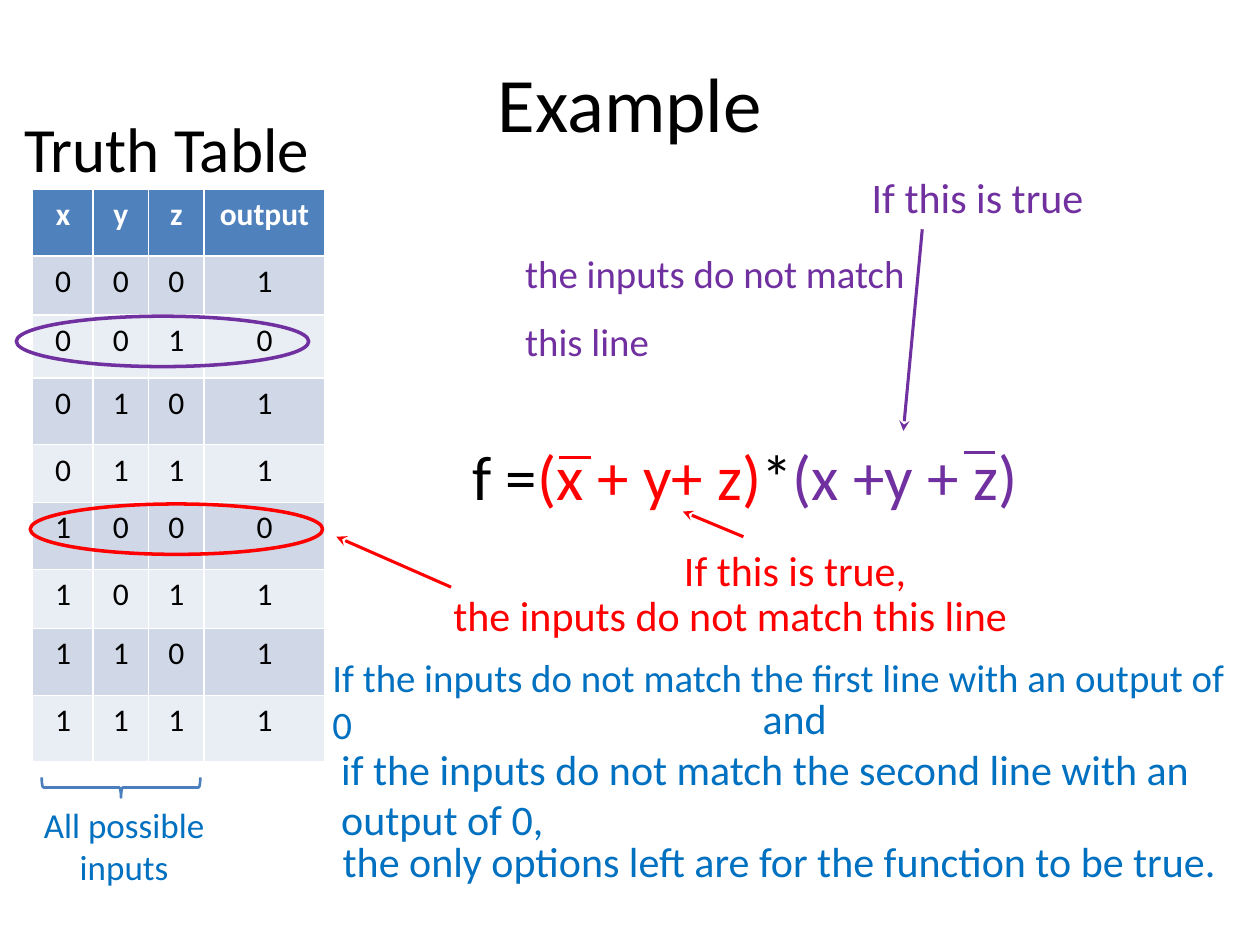
from itertools import product

from pptx import Presentation
from pptx.dml.color import RGBColor
from pptx.enum.shapes import MSO_CONNECTOR, MSO_SHAPE
from pptx.enum.text import MSO_ANCHOR, PP_ALIGN
from pptx.oxml.xmlchemy import OxmlElement
from pptx.util import Inches, Pt

FONT = "Calibri"
BLACK = RGBColor(0x00, 0x00, 0x00)
WHITE = RGBColor(0xFF, 0xFF, 0xFF)
RED = RGBColor(0xFF, 0x00, 0x00)
PURPLE = RGBColor(0x70, 0x30, 0xA0)
BLUE = RGBColor(0x00, 0x70, 0xC0)
BRACE_BLUE = RGBColor(0x4B, 0x7E, 0xBC)
HEADER_FILL = RGBColor(0x4F, 0x81, 0xBD)
BAND_FILLS = (RGBColor(0xE9, 0xED, 0xF4), RGBColor(0xD0, 0xD8, 0xE8))
LEFT, CENTER = PP_ALIGN.LEFT, PP_ALIGN.CENTER

# Truth table: output is 0 only for the two ringed lines
HEADERS = ("x", "y", "z", "output")
ZERO_LINES = {(0, 0, 1), (1, 0, 0)}
TABLE_AT = (0.26, 1.5)
COLUMN_WIDTHS = (0.48, 0.44, 0.44, 0.96)
ROW_HEIGHTS = (0.53, 0.47, 0.5, 0.53, 0.46, 0.53, 0.47, 0.53, 0.53)

RINGS = [((0.13, 2.51, 2.32, 0.4), PURPLE), ((0.24, 4, 2.32, 0.4), RED)]
ARROWS = [
    ((7.32, 1.82), (7.17, 3.42), PURPLE),
    ((3.58, 4.66), (2.67, 4.26), RED),
    ((5.9, 4.26), (5.42, 4.06), RED),
]
BRACE_BOX = (0.88, 5.62, 0.16, 1.26)

FORMULA_BOX = (3.65, 3.42, 4.58, 0.71)
FORMULA = [("f =", BLACK), ("(x + y+ z)", RED), ("*", BLACK), ("(x +y + z)", PURPLE)]
NEGATION_BARS = [((4.44, 3.63), (4.69, 3.63), RED), ((7.65, 3.59), (7.9, 3.59), PURPLE)]

# Box, size, colour, line spacing, paragraphs as (text, alignment)
TEXTS = [
    ((0.5, 0.3, 9, 1.02), 44, BLACK, 1, [("Example", CENTER)]),
    ((-0.02, 0.82, 2.63, 0.71), 36, BLACK, 1, [(" Truth Table", LEFT)]),
    ((6.82, 1.11, 2.97, 0.88), 24, PURPLE, 1.5, [("If this is true", LEFT)]),
    ((4, 1.82, 3.42, 1.15), 22.2, PURPLE, 1.3,
     [(" the inputs do not match", LEFT), (" this line", LEFT)]),
    ((5.33, 4.07, 2.32, 0.67), 24, RED, 1.5, [("If this is true,", LEFT)]),
    ((3.5, 4.43, 5.81, 0.74), 24, RED, 1.5,
     [("the inputs do not match this line", LEFT)]),
    ((2.54, 5.14, 7.47, 0.62), 22.2, BLUE, 1,
     [("If the inputs do not match the first line with an output of 0", LEFT)]),
    ((2.61, 5.45, 7.47, 1.23), 24, BLUE, 1,
     [("and ", CENTER),
      ("if the inputs do not match the second line with an output of 0,", LEFT)]),
    ((2.45, 6.58, 7.47, 0.62), 24, BLUE, 1,
     [("the only options left are for the function to be true.", CENTER)]),
    ((0.18, 6.33, 1.61, 0.81), 20, BLUE, 1, [("All possible inputs", CENTER)]),
]


def inches(lengths):
    return [Inches(length) for length in lengths]


def style(run, size, color, bold=False):
    run.font.name, run.font.size = FONT, Pt(size)
    run.font.color.rgb, run.font.bold = color, bold


def add_text_frame(shapes, box):
    frame = shapes.add_textbox(*inches(box)).text_frame
    frame.word_wrap = True
    return frame


def add_text(shapes, box, size, color, spacing, lines):
    frame = add_text_frame(shapes, box)
    frame.text = "\n".join(text for text, _ in lines)
    for paragraph, (_, alignment) in zip(frame.paragraphs, lines):
        paragraph.alignment = alignment
        if spacing != 1:
            paragraph.line_spacing = spacing
            if paragraph.text != lines[0][0]:
                paragraph.space_before = Pt(0.2 * size)
        style(paragraph.runs[0], size, color)
    return frame


def add_line(shapes, start, end, color, width, arrow=False):
    line = shapes.add_connector(MSO_CONNECTOR.STRAIGHT, *inches(start + end))
    line.line.color.rgb, line.line.width = color, Pt(width)
    if arrow:
        head = OxmlElement("a:tailEnd")
        head.set("type", "stealth")
        line.line._get_or_add_ln().append(head)
    line._element.spPr.append(OxmlElement("a:effectLst"))


def add_outline(shapes, preset, box, color, width):
    outline = shapes.add_shape(preset, *inches(box))
    outline.shadow.inherit = False
    outline.fill.background()
    outline.line.color.rgb, outline.line.width = color, Pt(width)
    return outline


def add_truth_table(shapes):
    rows = [HEADERS] + [
        inputs + (int(inputs not in ZERO_LINES),) for inputs in product((0, 1), repeat=3)
    ]
    size = inches((sum(COLUMN_WIDTHS), sum(ROW_HEIGHTS)))
    table = shapes.add_table(len(rows), len(HEADERS), *inches(TABLE_AT), *size).table
    for column, width in zip(table.columns, COLUMN_WIDTHS):
        column.width = Inches(width)
    for r, values in enumerate(rows):
        table.rows[r].height = Inches(ROW_HEIGHTS[r])
        header = r == 0
        for c, value in enumerate(values):
            cell = table.cell(r, c)
            cell.fill.solid()
            cell.fill.fore_color.rgb = HEADER_FILL if header else BAND_FILLS[r % 2]
            cell.text = str(value)
            paragraph = cell.text_frame.paragraphs[0]
            paragraph.alignment = CENTER
            style(paragraph.runs[0], 18, WHITE if header else BLACK, bold=header)


def add_formula(shapes):
    paragraph = add_text_frame(shapes, FORMULA_BOX).paragraphs[0]
    for term, color in FORMULA:
        run = paragraph.add_run()
        run.text = term
        style(run, 36, color)
    for start, end, color in NEGATION_BARS:
        add_line(shapes, start, end, color, 2)


def main():
    prs = Presentation()
    prs.slide_width, prs.slide_height = inches((10, 7.5))
    shapes = prs.slides.add_slide(prs.slide_layouts[6]).shapes

    # Table with its ringed lines and the brace under the inputs
    add_truth_table(shapes)
    for box, color in RINGS:
        add_outline(shapes, MSO_SHAPE.OVAL, box, color, 2)
    add_outline(shapes, MSO_SHAPE.RIGHT_BRACE, BRACE_BOX, BRACE_BLUE, 1.5).rotation = 90

    # Formula, arrows and explanations
    add_formula(shapes.add_group_shape().shapes)
    for start, end, color in ARROWS:
        add_line(shapes, start, end, color, 1.75, arrow=True)
    title, *_ = [add_text(shapes, *text) for text in TEXTS]
    title.vertical_anchor = MSO_ANCHOR.MIDDLE

    prs.save("out.pptx")


if __name__ == "__main__":
    main()
